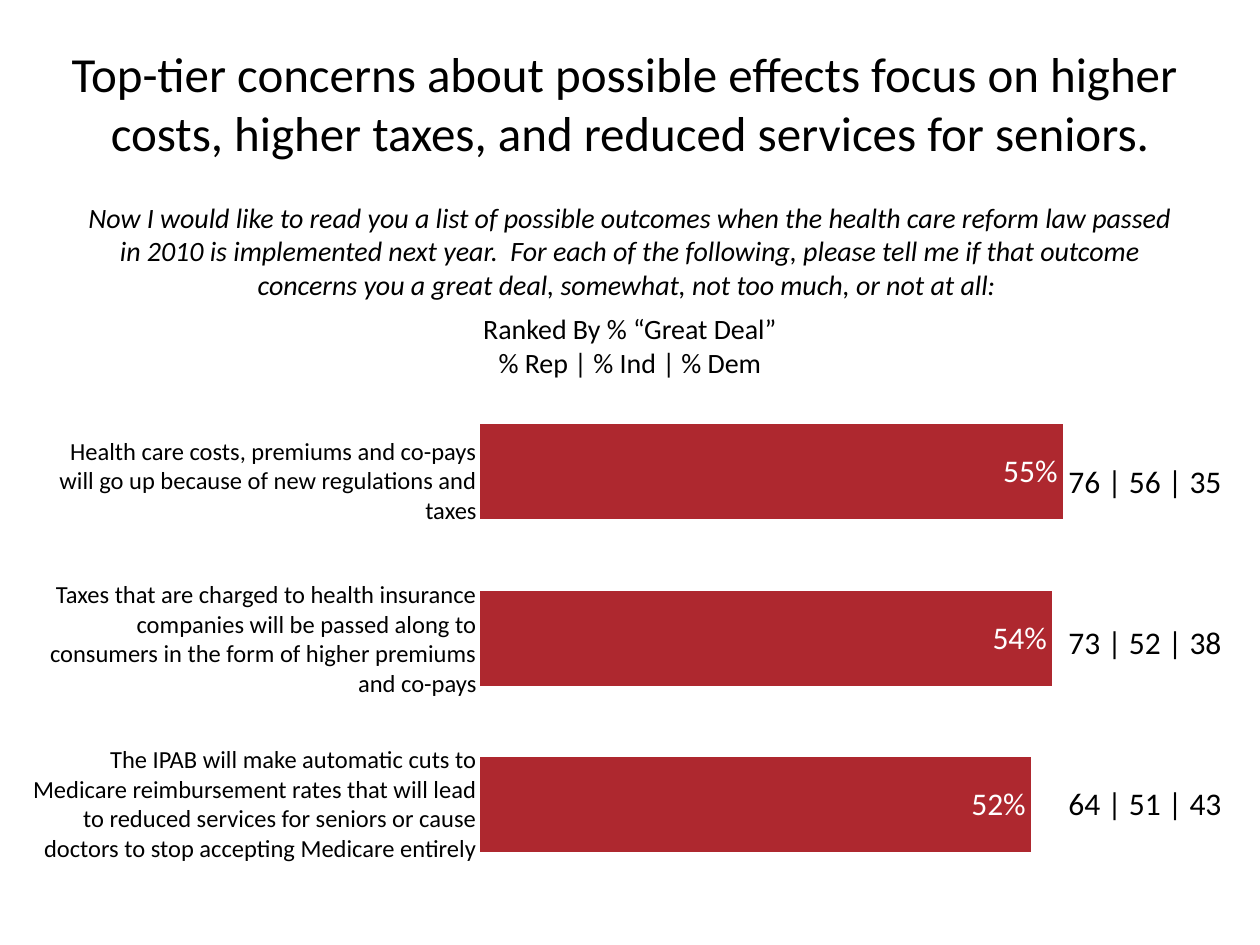
from pptx import Presentation
from pptx.chart.data import CategoryChartData
from pptx.dml.color import RGBColor
from pptx.enum.chart import XL_CHART_TYPE as ChartType, XL_LABEL_POSITION as LabelPos
from pptx.enum.text import MSO_ANCHOR as Anchor, MSO_AUTO_SIZE as AutoSize, PP_ALIGN as Align
from pptx.util import Pt

FONT = "Calibri"
BLACK, WHITE, RED = "000000", "FFFFFF", "AE282F"
LABEL_RIGHT = 279.4
SPLIT_LEFT, SPLIT_TOP, SPLIT_STEP = 603.4, 260.6, 91.8

TITLE = ("Top-tier concerns about possible effects focus on higher \n"
         "costs, higher taxes, and reduced services for seniors.")
QUESTION = ("Now I would like to read you a list of possible outcomes when the health care "
            "reform law passed in 2010 is implemented next year.  For each of the following, "
            "please tell me if that outcome concerns you a great deal, somewhat, not too much, "
            "or not at all: ")
RANKING = ["Ranked By % “Great Deal”", "% Rep | % Ind | % Dem"]

CONCERNS = [
    ("Health care costs, premiums and co-pays will go up because of new regulations and taxes",
     (23.8, 245.5, 58.3), 0.55, (76, 56, 35)),
    ("Taxes that are charged to health insurance companies will be passed along to consumers "
     "in the form of higher premiums and co-pays",
     (20.9, 327.6, 74.9), 0.54, (73, 52, 38)),
    ("The IPAB will make automatic cuts to Medicare reimbursement rates that will lead to "
     "reduced services for seniors or cause doctors to stop accepting Medicare entirely",
     (0, 421.9, 74.9), 0.52, (64, 51, 43)),
]


def style_font(font, size, color):
    """Set the typeface, size and hex colour of a font."""
    font.name, font.size = FONT, Pt(size)
    font.color.rgb = RGBColor.from_string(color)


def add_box(slide, left, top, width, height, wrap=True, anchor=Anchor.TOP,
            fit=AutoSize.SHAPE_TO_FIT_TEXT):
    """Add an empty text box and return its text frame."""
    frame = slide.shapes.add_textbox(Pt(left), Pt(top), Pt(width), Pt(height)).text_frame
    frame.word_wrap, frame.vertical_anchor, frame.auto_size = wrap, anchor, fit
    return frame


def write(frame, text, size=16, color=BLACK, align=Align.CENTER, italic=False, after=0):
    """Write one formatted paragraph, filling the empty first one if there is one."""
    first = frame.paragraphs[0]
    paragraph = frame.add_paragraph() if first.runs else first
    paragraph.text = text
    paragraph.alignment, paragraph.space_after = align, Pt(after)
    for run in paragraph.runs:
        style_font(run.font, size, color)
        run.font.italic = italic


def add_concern_chart(slide):
    """Add the bar chart of the shares concerned a great deal."""
    shares = CategoryChartData(number_format="0%")
    shares.categories = ["1", "2", "3"]
    shares.add_series("Series 1", [share for _, _, share, _ in reversed(CONCERNS)])
    chart = slide.shapes.add_chart(ChartType.BAR_CLUSTERED, Pt(267), Pt(216), Pt(378),
                                   Pt(297.4), shares).chart
    chart.has_legend = chart.has_title = False
    style_font(chart.font, 18, BLACK)
    chart.category_axis.visible = chart.value_axis.visible = False
    chart.value_axis.has_major_gridlines = False
    chart.value_axis.minimum_scale, chart.value_axis.maximum_scale = 0, 0.6

    plot = chart.plots[0]
    plot.gap_width, plot.vary_by_categories = 75, False
    bars = plot.series[0]
    bars.format.fill.solid()
    bars.format.fill.fore_color.rgb = RGBColor.from_string(RED)
    labels = bars.data_labels
    labels.show_value, labels.position = True, LabelPos.INSIDE_END
    labels.number_format, labels.number_format_is_linked = "0%", False
    style_font(labels.font, 18, WHITE)


def add_concern(slide, row, concern, place, split):
    """Add the wording of one concern and its split by party."""
    left, top, height = place
    wording = add_box(slide, left, top, LABEL_RIGHT - left, height)
    write(wording, concern, size=14, align=Align.RIGHT)
    parties = add_box(slide, SPLIT_LEFT, SPLIT_TOP + row * SPLIT_STEP, 103, 29, wrap=False)
    write(parties, " | ".join(map(str, split)), size=18, align=Align.LEFT)


def main():
    """Build the slide and save it."""
    deck = Presentation()
    deck.slide_width, deck.slide_height = Pt(720), Pt(540)
    slide = deck.slides.add_slide(deck.slide_layouts[6])

    add_concern_chart(slide)
    title = add_box(slide, 0, 0, 720, 116.6, anchor=Anchor.MIDDLE, fit=AutoSize.NONE)
    write(title, TITLE, size=28)
    question = add_box(slide, 36, 110.9, 648, 110.2)
    write(question, QUESTION, italic=True, after=6)
    for line in RANKING:
        write(question, line)
    for row, (concern, place, _, split) in enumerate(CONCERNS):
        add_concern(slide, row, concern, place, split)

    deck.save("out.pptx")


if __name__ == "__main__":
    main()
